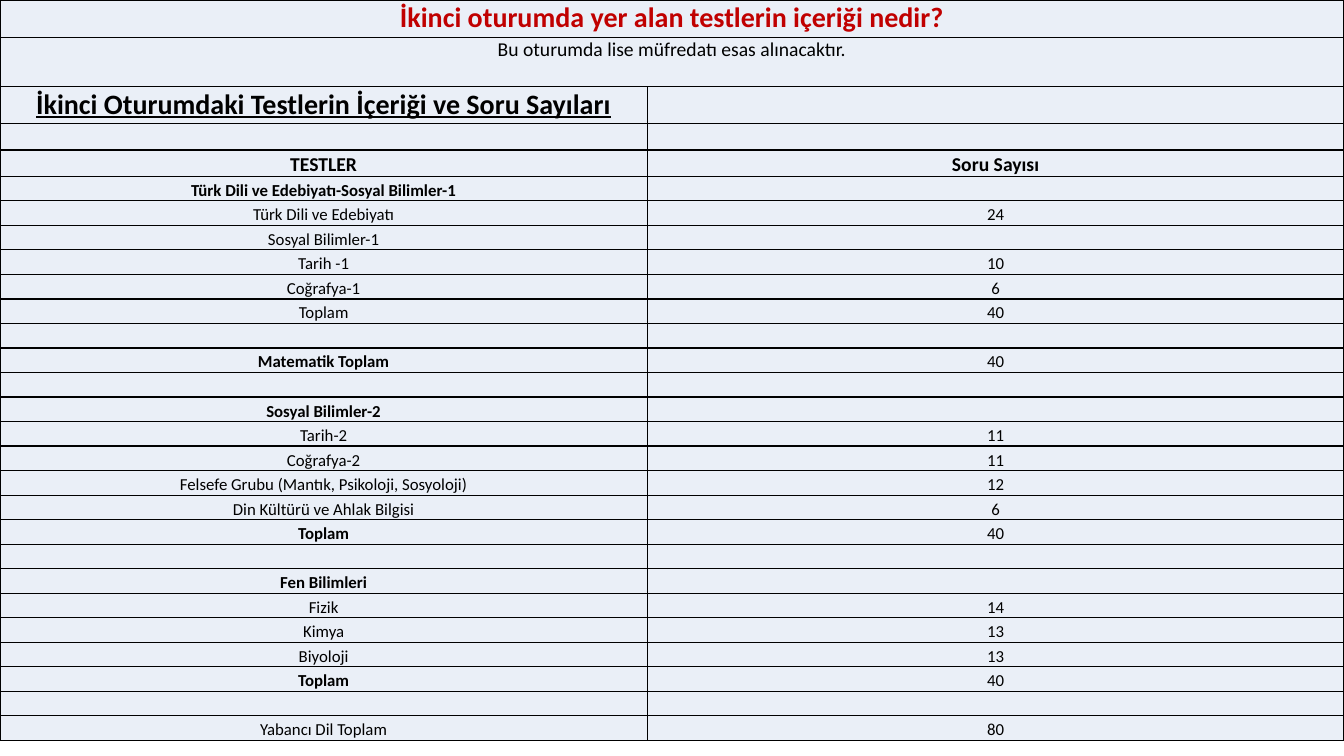
import dataclasses

import lxml.etree
import pptx
import pptx.dml.color
import pptx.enum.text
import pptx.oxml.ns
import pptx.util


@dataclasses.dataclass(frozen=True)
class Theme:
    font: str = "Calibri"
    text: str = "000000"
    accent: str = "C00000"
    fill: str = "EAEFF7"
    border: str = "000000"
    border_pt: float = 1
    heading: int = 20
    label: int = 14
    body: int = 12


THEME = Theme()
WIDTH, HEIGHT = 13.33, 7.5
TABLE_HEIGHT = 0.98 * HEIGHT
FIRST_COLUMN = 6.42
TOP_ROWS = [0.37, 0.49, 0.37, 0.26, 0.26]
INSET = 0.01

SUBJECTS = [
    ("Türk Dili ve Edebiyatı-Sosyal Bilimler-1", "", True),
    ("Türk Dili ve Edebiyatı", "24", False),
    ("Sosyal Bilimler-1", "", False),
    ("Tarih -1", "10", False),
    ("Coğrafya-1", "6", False),
    ("Toplam", "40", False),
    ("", "", False),
    ("Matematik Toplam", "40", True),
    ("", "", False),
    ("Sosyal Bilimler-2", "", True),
    ("Tarih-2", "11", False),
    ("Coğrafya-2", "11", False),
    ("Felsefe Grubu (Mantık, Psikoloji, Sosyoloji)", "12", False),
    ("Din Kültürü ve Ahlak Bilgisi", "6", False),
    ("Toplam", "40", True),
    ("", "", False),
    ("Fen Bilimleri", "", True),
    ("Fizik", "14", False),
    ("Kimya", "13", False),
    ("Biyoloji", "13", False),
    ("Toplam", "40", True),
    ("", "", False),
    ("Yabancı Dil Toplam", "80", False),
]


def rgb(value):
    return pptx.dml.color.RGBColor.from_string(value)


def sub(parent, tag, **attributes):
    return lxml.etree.SubElement(parent, pptx.oxml.ns.qn(tag), **attributes)


def style_cell(cell):
    cell.margin_left = cell.margin_right = cell.margin_top = pptx.util.Inches(INSET)
    cell.margin_bottom = 0
    tc_pr = cell._tc.get_or_add_tcPr()
    for side in ("L", "R", "T", "B"):
        line = sub(tc_pr, f"a:ln{side}", w=str(pptx.util.Pt(THEME.border_pt)))
        sub(sub(line, "a:solidFill"), "a:srgbClr", val=THEME.border)
    cell.fill.solid()
    cell.fill.fore_color.rgb = rgb(THEME.fill)


def write_cell(cell, text, size, bold=False, underline=False, color=THEME.text, bottom=True):
    anchor = pptx.enum.text.MSO_ANCHOR
    cell.vertical_anchor = anchor.BOTTOM if bottom else anchor.TOP
    p = cell.text_frame.paragraphs[0]
    p.alignment = pptx.enum.text.PP_ALIGN.CENTER
    if not text:
        sub(p._p, "a:endParaRPr", sz=str(size * 100))
        return
    r = p.add_run()
    r.text = text
    r.font.name = THEME.font
    r.font.size = pptx.util.Pt(size)
    r.font.bold = bold
    r.font.underline = underline
    r.font.color.rgb = rgb(color)


def add_grid(s):
    rows = len(TOP_ROWS) + len(SUBJECTS)
    table = s.shapes.add_table(
        rows, 2, 0, 0, pptx.util.Inches(WIDTH), pptx.util.Inches(TABLE_HEIGHT)
    ).table
    table.first_row = table.horz_banding = False
    subject_row = (TABLE_HEIGHT - sum(TOP_ROWS)) / len(SUBJECTS)
    for row, height in zip(table.rows, TOP_ROWS + [subject_row] * len(SUBJECTS)):
        row.height = pptx.util.Inches(height)
    for column, width in zip(table.columns, (FIRST_COLUMN, WIDTH - FIRST_COLUMN)):
        column.width = pptx.util.Inches(width)
    for cell in table.iter_cells():
        style_cell(cell)
    return table


def write_headings(table):
    for row in range(2):
        table.cell(row, 0).merge(table.cell(row, 1))
    write_cell(table.cell(0, 0), "İkinci oturumda yer alan testlerin içeriği nedir?",
               THEME.heading, bold=True, color=THEME.accent, bottom=False)
    write_cell(table.cell(1, 0), "Bu oturumda lise müfredatı esas alınacaktır.",
               THEME.label, bottom=False)
    write_cell(table.cell(2, 0), "İkinci Oturumdaki Testlerin İçeriği ve Soru Sayıları",
               THEME.heading, bold=True, underline=True, bottom=False)
    write_cell(table.cell(2, 1), "", THEME.body)
    for column, label in enumerate(("TESTLER", "Soru Sayısı")):
        write_cell(table.cell(3, column), "", THEME.body)
        write_cell(table.cell(4, column), label, THEME.label, bold=True)


def write_subjects(table):
    for row, (subject, count, bold) in enumerate(SUBJECTS, len(TOP_ROWS)):
        write_cell(table.cell(row, 0), subject, THEME.body, bold=bold)
        write_cell(table.cell(row, 1), count, THEME.body)


def main():
    prs = pptx.Presentation()
    prs.slide_width = pptx.util.Inches(WIDTH)
    prs.slide_height = pptx.util.Inches(HEIGHT)
    s = prs.slides.add_slide(prs.slide_layouts.get_by_name("Blank"))
    table = add_grid(s)
    write_headings(table)
    write_subjects(table)
    prs.save("out.pptx")


if __name__ == "__main__":
    main()
